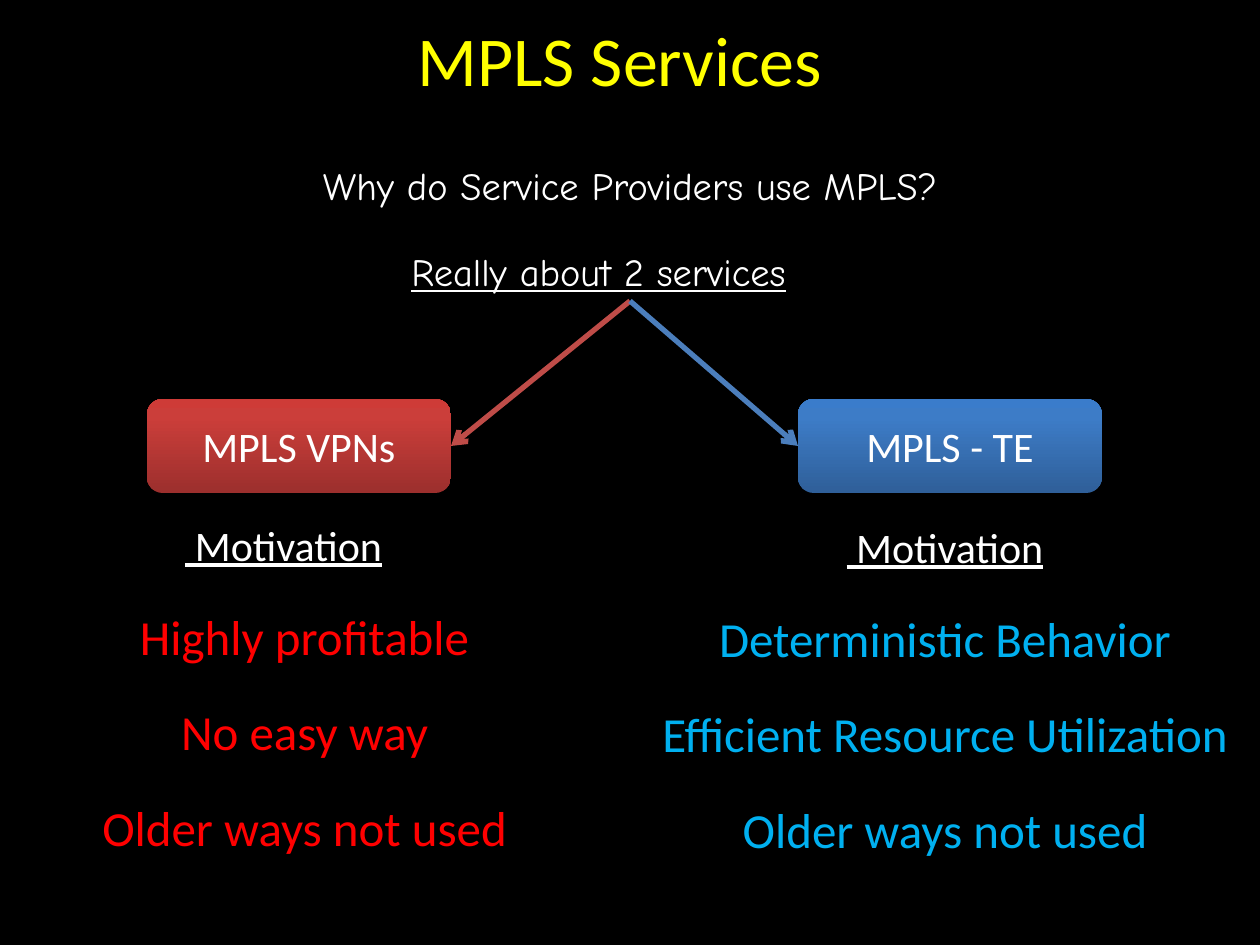
import pptx
import pptx.dml.color
import pptx.enum.shapes
import pptx.enum.text
import pptx.oxml
import pptx.oxml.ns
import pptx.util
from dataclasses import dataclass
from lxml import etree

PX = 914400 / 126  # EMU per px
ALIGN = pptx.enum.text.PP_ALIGN
ANCHOR = pptx.enum.text.MSO_ANCHOR
SHAPE = pptx.enum.shapes.MSO_SHAPE
LEFT_SIDE, RIGHT_SIDE = 1, 3  # connection sites of a rounded rectangle


@dataclass(frozen=True)
class Theme:
    font: str = "Calibri"
    intro_font: str = "Comic Neue"
    background: str = "000000"
    text: str = "FFFFFF"
    title: str = "FFFF00"
    title_size: int = 40
    point_size: int = 28
    label_size: int = 24
    intro_size: int = 22
    line_width: int = 3
    vpn_gradient: tuple = ((0, "9C2F2D"), (80, "CB3E3A"), (100, "CE3B37"))
    te_gradient: tuple = ((0, "2F5F99"), (80, "3D7CC7"), (100, "3A7CCB"))
    vpn_arrow: str = "BF4C48"
    te_arrow: str = "4B7EBC"
    vpn_text: str = "FF0000"
    te_text: str = "00B0F0"


T = Theme()


def px(n):
    return pptx.util.Emu(round(n * PX))


def rgb(value):
    return pptx.dml.color.RGBColor.from_string(value)


def add_run(p, text, size, color=T.text, font=T.font, underline=False):
    r = p.add_run()
    r.text = text
    r.font.size = pptx.util.Pt(size)
    r.font.name = font
    r.font.color.rgb = rgb(color)
    r.font.underline = underline


def add_text_box(slide, box):
    tf = slide.shapes.add_textbox(*map(px, box)).text_frame
    tf.word_wrap = True
    return tf


def indent(p, n):
    p.alignment = ALIGN.LEFT
    p._p.get_or_add_pPr().set("marL", str(px(n)))


# Title at the top
def add_title(slide, box, text):
    sp = slide.shapes.title
    sp.left, sp.top, sp.width, sp.height = map(px, box)
    tf = sp.text_frame
    tf.vertical_anchor = ANCHOR.TOP
    p = tf.paragraphs[0]
    p.alignment = ALIGN.CENTER
    add_run(p, text, T.title_size, T.title)


# Question and its short answer
def add_intro(slide, box, question, answer):
    tf = add_text_box(slide, box)
    p = tf.paragraphs[0]
    p.alignment = ALIGN.CENTER
    add_run(p, question, T.intro_size, font=T.intro_font)
    p = tf.add_paragraph()
    p.space_before = pptx.util.Pt(22.5)
    indent(p, 294)
    add_run(p, answer, T.intro_size, font=T.intro_font, underline=True)


# Rounded box that names a service
def add_service(slide, box, label, stops):
    sp = slide.shapes.add_shape(SHAPE.ROUNDED_RECTANGLE, *map(px, box))
    sp.shadow.inherit = False
    sp.line.fill.background()
    sp.fill.gradient()
    sp.fill.gradient_angle = 90
    gs_list = sp._element.spPr.find(".//" + pptx.oxml.ns.qn("a:gsLst"))
    for gs in list(gs_list):
        gs_list.remove(gs)
    for position, color in stops:
        gs = etree.SubElement(gs_list, pptx.oxml.ns.qn("a:gs"), pos=str(position * 1000))
        etree.SubElement(gs, pptx.oxml.ns.qn("a:srgbClr"), val=color)
    tf = sp.text_frame
    tf.vertical_anchor = ANCHOR.MIDDLE
    p = tf.paragraphs[0]
    p.alignment = ALIGN.CENTER
    add_run(p, label, T.label_size)
    return sp


# Arrow from the answer to a service
def add_arrow(slide, start, target, site, color):
    x, y = map(px, start)
    line = slide.shapes.add_connector(pptx.enum.shapes.MSO_CONNECTOR.STRAIGHT, x, y, x, y)
    line.end_connect(target, site)
    line.line.color.rgb = rgb(color)
    line.line.width = pptx.util.Pt(T.line_width)
    etree.SubElement(line.line._get_or_add_ln(), pptx.oxml.ns.qn("a:tailEnd"), type="arrow")
    etree.SubElement(line._element.spPr, pptx.oxml.ns.qn("a:effectLst"))


# Motivation heading with the reasons below it
def add_motivation(slide, box, points, color, heading_indent=None):
    tf = add_text_box(slide, box)
    p = tf.paragraphs[0]
    p.alignment = ALIGN.CENTER
    if heading_indent is not None:
        indent(p, heading_indent)
    add_run(p, " Motivation", T.label_size, underline=True)
    for point in points:
        p = tf.add_paragraph()
        p.alignment = ALIGN.CENTER
        p.space_before = pptx.util.Pt(21)
        add_run(p, point, T.point_size, color)


def main():
    prs = pptx.Presentation()
    prs.slide_width, prs.slide_height = px(1260), px(945)
    slide = prs.slides.add_slide(prs.slide_layouts[5])
    slide.background.fill.solid()
    slide.background.fill.fore_color.rgb = rgb(T.background)

    add_title(slide, (53, 10, 1134, 106), "MPLS Services")
    add_intro(slide, (105, 156, 1050, 144),
              "Why do Service Providers use MPLS?", "Really about 2 services")

    vpn = add_service(slide, (147, 399, 304, 94), "MPLS VPNs", T.vpn_gradient)
    te = add_service(slide, (798, 399, 304, 94), "MPLS - TE", T.te_gradient)
    fork = (630, 301)
    add_arrow(slide, fork, vpn, RIGHT_SIDE, T.vpn_arrow)
    add_arrow(slide, fork, te, LEFT_SIDE, T.te_arrow)

    add_motivation(slide, (0, 513, 609, 357),
                   ("Highly profitable", "No easy way", "Older ways not used"),
                   T.vpn_text, heading_indent=173)
    add_motivation(slide, (630, 515, 630, 394),
                   ("Deterministic Behavior", "Efficient Resource Utilization",
                    "Older ways not used"), T.te_text)
    prs.save("out.pptx")


if __name__ == "__main__":
    main()
